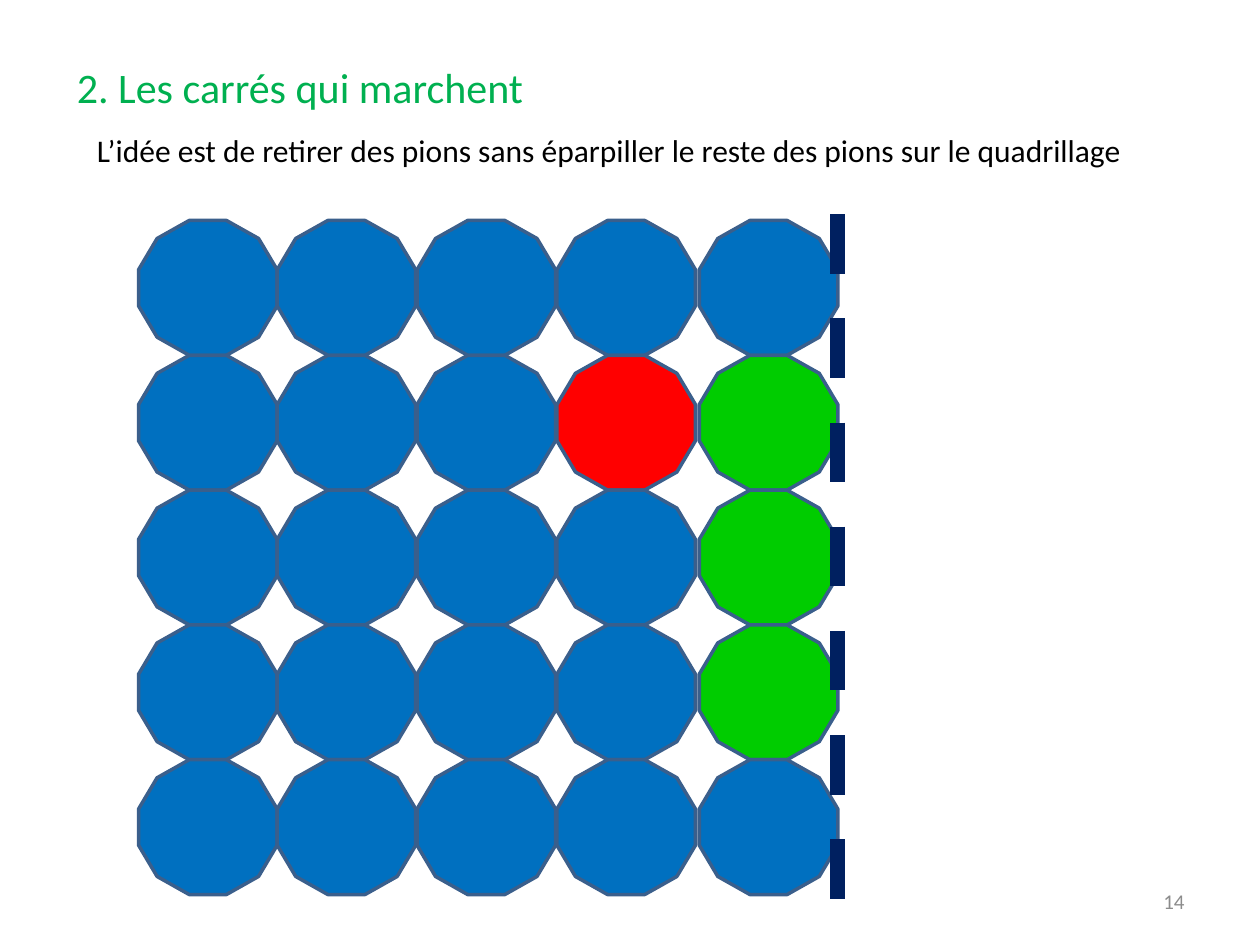
from pptx import Presentation
from pptx.dml.color import RGBColor
from pptx.enum.dml import MSO_LINE
from pptx.enum.shapes import MSO_CONNECTOR, MSO_SHAPE
from pptx.enum.text import MSO_ANCHOR, MSO_AUTO_SIZE, PP_ALIGN
from pptx.oxml.ns import qn
from pptx.util import Inches, Pt
from lxml import etree

DASH, STRAIGHT = MSO_LINE.DASH, MSO_CONNECTOR.STRAIGHT
PAWN = MSO_SHAPE.DODECAGON
TOP, MID = MSO_ANCHOR.TOP, MSO_ANCHOR.MIDDLE
LEFT, RIGHT = PP_ALIGN.LEFT, PP_ALIGN.RIGHT

HEX = {"title": "00B050", "text": "000000", "number": "8C8C8C", "blue": "0070C0",
       "red": "FF0000", "green": "00CC00", "edge": "3A5F8C", "axis": "002060"}
RGB = {name: RGBColor.from_string(code) for name, code in HEX.items()}


def write(box, text, area, size, color, align=LEFT, anchor=TOP):
    box.left, box.top, box.width, box.height = [Inches(n) for n in area]
    frame = box.text_frame
    frame.text = text
    look = {"word_wrap": True, "auto_size": MSO_AUTO_SIZE.NONE, "vertical_anchor": anchor}
    for key, val in look.items():
        setattr(frame, key, val)
    para = frame.paragraphs[0]
    para.alignment = align
    font = para.runs[0].font
    for key, val in {"name": "Calibri", "size": Pt(size)}.items():
        setattr(font, key, val)
    font.color.rgb = RGB[color]


deck = Presentation()
deck.slide_width, deck.slide_height = Inches(10), Inches(7.5)
slide = deck.slides.add_slide(deck.slide_layouts[5])
shapes = slide.shapes

# Title and opening sentence
write(shapes.title, "2. Les carrés qui marchent", (0.51, 0.44, 4.25, 0.5), 24, "title")
write(shapes.add_textbox(0, 0, 0, 0),
      "L’idée est de retirer des pions sans éparpiller le reste des pions sur le quadrillage",
      (0.67, 0.99, 8.5, 0.4), 18, "text")

# Grid of pawns: the last column stands slightly apart
cols = [1.1, 2.2, 3.31, 4.42, 5.55]
top, wide, high = 1.75, 1.1, 1.07
special = {(1, 3): "red", (1, 4): "green", (2, 4): "green", (3, 4): "green"}
for col, left in enumerate(cols):
    for row in range(5):
        pawn = shapes.add_shape(PAWN, Inches(left), Inches(top + row * high),
                                Inches(wide), Inches(high))
        pawn.shadow.inherit = False
        pawn.fill.solid()
        pawn.fill.fore_color.rgb = RGB[special.get((row, col), "blue")]
        pawn.line.color.rgb = RGB["edge"]
        pawn.line.width = Pt(2)

# Dashed axis along the right edge of the grid
edge = Inches(cols[-1] + wide)
axis = shapes.add_connector(STRAIGHT, edge, Inches(1.7), edge, Inches(7.33))
axis.line.color.rgb = RGB["axis"]
for key, val in {"width": Pt(8.5), "dash_style": DASH}.items():
    setattr(axis.line, key, val)
etree.SubElement(axis._element.spPr, qn("a:effectLst"))

# Slide number
write(shapes.add_textbox(0, 0, 0, 0), "14", (7.17, 6.95, 2.33, 0.4), 12,
      "number", RIGHT, MID)

deck.save("out.pptx")
